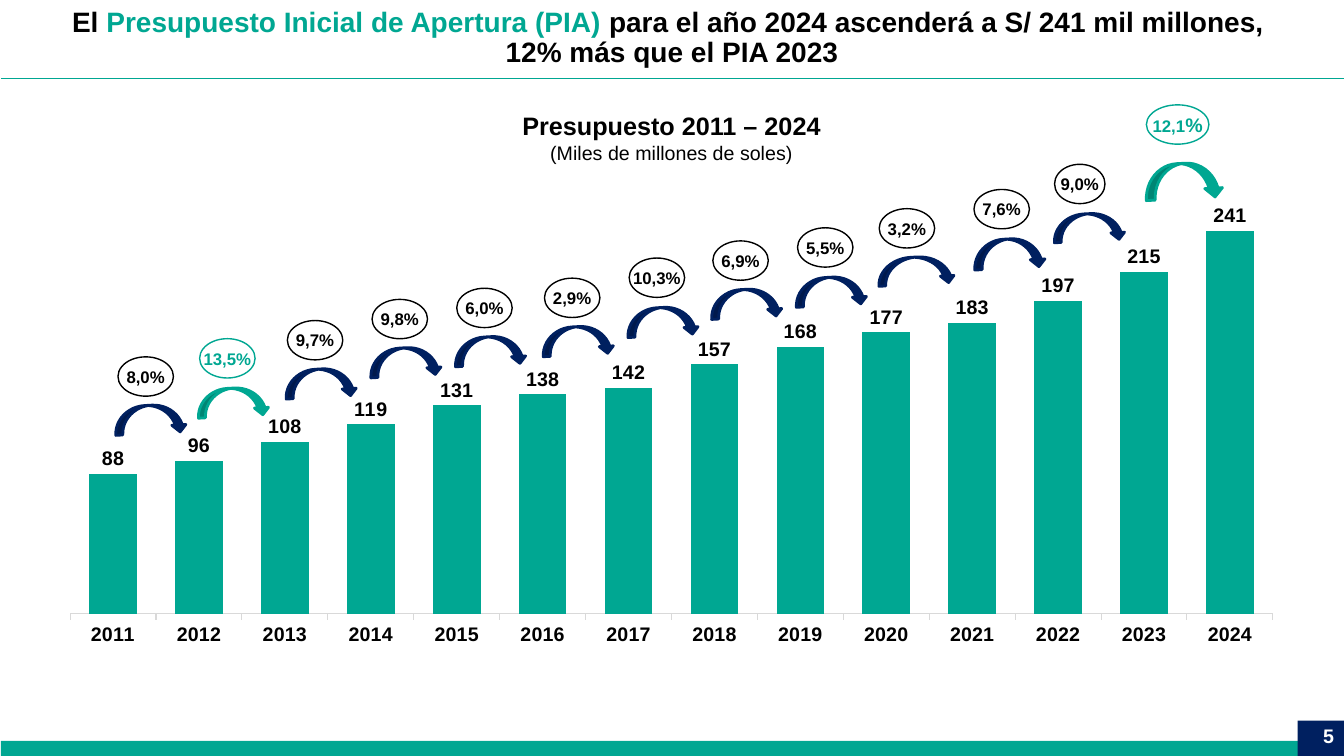
from dataclasses import dataclass

from lxml import etree
from pptx import Presentation
from pptx.chart.data import CategoryChartData
from pptx.dml.color import RGBColor
from pptx.enum.chart import XL_CHART_TYPE, XL_LABEL_POSITION, XL_TICK_MARK
from pptx.enum.shapes import MSO_CONNECTOR, MSO_SHAPE
from pptx.enum.text import MSO_ANCHOR, MSO_AUTO_SIZE, PP_ALIGN
from pptx.oxml import parse_xml
from pptx.oxml.ns import nsdecls, qn
from pptx.shapes.autoshape import Shape
from pptx.slide import Slide
from pptx.text.text import TextFrame
from pptx.util import Inches, Pt

COLUMN = XL_CHART_TYPE.COLUMN_CLUSTERED
OUTSIDE_END = XL_LABEL_POSITION.OUTSIDE_END
TICK_OUT = XL_TICK_MARK.OUTSIDE
STRAIGHT = MSO_CONNECTOR.STRAIGHT
RECT, OVAL, ARROW = MSO_SHAPE.RECTANGLE, MSO_SHAPE.OVAL, MSO_SHAPE.CURVED_DOWN_ARROW
TOP, MIDDLE = MSO_ANCHOR.TOP, MSO_ANCHOR.MIDDLE
NO_AUTOSIZE = MSO_AUTO_SIZE.NONE
CENTER, RIGHT = PP_ALIGN.CENTER, PP_ALIGN.RIGHT


@dataclass(frozen=True)
class Theme:
    font: str = "Arial"
    green: RGBColor = RGBColor(0x00, 0xA7, 0x92)
    navy: RGBColor = RGBColor(0x00, 0x20, 0x60)
    black: RGBColor = RGBColor(0x00, 0x00, 0x00)
    white: RGBColor = RGBColor(0xFF, 0xFF, 0xFF)
    axis: RGBColor = RGBColor(0xD9, 0xD9, 0xD9)
    title: int = 20
    heading: int = 18
    body: int = 14
    badge: int = 12


@dataclass(frozen=True)
class Growth:
    rate: str
    badge_x: float
    badge_y: float
    arrow_x: float
    arrow_y: float
    badge_w: float = 0.55
    arrow_w: float = 0.71
    arrow_h: float = 0.28
    highlight: bool = False
    percent_size: int = 12


THEME = Theme()
FIRST_YEAR = 2011
BILLION = 10**9
BUDGETS = (88, 96, 108, 119, 131, 138, 142, 157, 168, 177, 183, 197, 215, 241)
BADGE_H = 0.39
ARROW_TILT = 356.9
GROWTHS = (
    Growth("8,0", 1.17, 3.54, 1.14, 4.02),
    Growth("13,5", 1.98, 3.36, 1.96, 3.85, highlight=True),
    Growth("9,7", 2.85, 3.18, 2.83, 3.66),
    Growth("9,8", 3.69, 2.97, 3.67, 3.45),
    Growth("6,0", 4.53, 2.86, 4.51, 3.34),
    Growth("2,9", 5.4, 2.76, 5.38, 3.24),
    Growth("10,3", 6.24, 2.56, 6.22, 3.05),
    Growth("6,9", 7.07, 2.39, 7.05, 2.87),
    Growth("5,5", 7.91, 2.26, 7.89, 2.75),
    Growth("3,2", 8.72, 2.07, 8.71, 2.55, arrow_w=0.76, arrow_h=0.27),
    Growth("7,6", 9.66, 1.88, 9.66, 2.37, arrow_h=0.29),
    Growth("9,0", 10.46, 1.63, 10.45, 2.12, badge_w=0.5, arrow_h=0.27),
    Growth("12,1", 11.37, 1.04, 11.36, 1.62, badge_w=0.62, arrow_w=0.77,
           arrow_h=0.35, highlight=True, percent_size=14),
)


def add_paragraph(tf: TextFrame, first: bool, runs: tuple[str, ...], size: int,
                  color: RGBColor, bold: bool = True, align: PP_ALIGN = CENTER):
    p = tf.paragraphs[0] if first else tf.add_paragraph()
    p.alignment = align
    p.font.name, p.font.size, p.font.bold = THEME.font, Pt(size), bold
    p.font.color.rgb = color
    for text in runs:
        p.add_run().text = text
    return p


def add_shape(s: Slide, kind: MSO_SHAPE, x: float, y: float, w: float, h: float,
              fill: RGBColor | None, line: RGBColor | None = None,
              weight: float = 1) -> Shape:
    sp = s.shapes.add_shape(kind, Inches(x), Inches(y), Inches(w), Inches(h))
    sp.shadow.inherit = False
    if fill is None:
        sp.fill.background()
    else:
        sp.fill.solid()
        sp.fill.fore_color.rgb = fill
    if line is None:
        sp.line.fill.background()
    else:
        sp.line.color.rgb = line
        sp.line.width = Pt(weight)
    return sp


def add_text_box(s: Slide, x: float, y: float, w: float, h: float) -> TextFrame:
    tf = s.shapes.add_textbox(Inches(x), Inches(y), Inches(w), Inches(h)).text_frame
    tf.word_wrap = True
    return tf


def add_frame(s: Slide) -> None:
    add_shape(s, RECT, 0.01, 7.35, 13.32, 0.15, THEME.green)
    add_shape(s, RECT, 12.87, 7.15, 0.47, 0.35, THEME.navy)
    rule = s.shapes.add_connector(STRAIGHT, Inches(0.01), Inches(0.78),
                                  Inches(13.33), Inches(0.78))
    rule.line.color.rgb = THEME.green
    rule.line.width = Pt(0.75)
    etree.SubElement(rule.element.spPr, qn("a:effectLst"))
    page = add_text_box(s, 10.33, 7.13, 3, 0.4)
    add_paragraph(page, True, ("5",), THEME.body, THEME.white, align=RIGHT)


def add_title(s: Slide) -> None:
    title = s.shapes.title
    title.left, title.top = Inches(0), Inches(0.03)
    title.width, title.height = Inches(13.33), Inches(0.71)
    tf = title.text_frame
    tf.auto_size, tf.vertical_anchor, tf.word_wrap = NO_AUTOSIZE, TOP, True
    lines = (
        ("El ", "Presupuesto Inicial de Apertura (PIA) ",
         "para el año 2024 ascenderá a S/ 241 mil millones, "),
        ("12% más que el PIA 2023",),
    )
    for i, runs in enumerate(lines):
        p = add_paragraph(tf, i == 0, runs, THEME.title, THEME.black)
        p.line_spacing = 0.9
        p.space_before = Pt(0)
    tf.paragraphs[0].runs[1].font.color.rgb = THEME.green


def add_budget_chart(s: Slide) -> None:
    data = CategoryChartData(number_format="#,##0,,,")
    data.categories = [str(FIRST_YEAR + i) for i in range(len(BUDGETS))]
    data.add_series("Presupuesto", [b * BILLION for b in BUDGETS])
    chart = s.shapes.add_chart(COLUMN, Inches(0.69), Inches(1.19),
                               Inches(11.94), Inches(5.63), data).chart
    chart.has_legend = chart.has_title = False
    chart.font.name, chart.font.size, chart.font.bold = THEME.font, Pt(THEME.body), True
    chart.font.color.rgb = THEME.black

    years = chart.category_axis
    years.major_tick_mark = TICK_OUT
    years.format.line.color.rgb = THEME.axis
    years.format.line.width = Pt(0.75)
    amounts = chart.value_axis
    amounts.visible = amounts.has_major_gridlines = False
    amounts.minimum_scale, amounts.maximum_scale = 0, 300 * BILLION

    plot = chart.plots[0]
    plot.gap_width, plot.overlap, plot.vary_by_categories = 80, -27, False
    plot.has_data_labels = True
    labels = plot.data_labels
    labels.show_value, labels.position = True, OUTSIDE_END
    labels.number_format, labels.number_format_is_linked = "#,##0,,,", False
    bars = plot.series[0].format.fill
    bars.solid()
    bars.fore_color.rgb = THEME.green

    plot_area = chart.element.chart.plotArea
    for old in plot_area.findall(qn("c:layout")):
        plot_area.remove(old)
    bounds = "".join(f'<c:{k} val="{v}"/>' for k, v in (
        ("layoutTarget", "inner"), ("xMode", "edge"), ("yMode", "edge"),
        ("x", 0), ("y", 0.03), ("w", 1), ("h", 0.84)))
    plot_area.insert(0, parse_xml(
        f'<c:layout {nsdecls("c")}><c:manualLayout>{bounds}</c:manualLayout></c:layout>'))


def add_growth(s: Slide, g: Growth) -> None:
    arrow_color = THEME.green if g.highlight else THEME.navy
    badge_color = THEME.green if g.highlight else THEME.black
    arrow = add_shape(s, ARROW, g.arrow_x, g.arrow_y, g.arrow_w, g.arrow_h,
                      arrow_color, arrow_color, 2)
    arrow.rotation = ARROW_TILT
    badge = add_shape(s, OVAL, g.badge_x, g.badge_y, g.badge_w, BADGE_H, None, badge_color)
    tf = badge.text_frame
    tf.margin_left = tf.margin_right = Inches(0.04)
    tf.word_wrap, tf.vertical_anchor = False, MIDDLE
    p = add_paragraph(tf, True, (g.rate, "%"), THEME.badge, badge_color)
    p.runs[1].font.size = Pt(g.percent_size)


def main() -> None:
    prs = Presentation()
    prs.slide_width, prs.slide_height = Inches(13.33), Inches(7.5)
    s = prs.slides.add_slide(prs.slide_layouts[5])
    add_title(s)
    add_budget_chart(s)
    add_frame(s)
    tf = add_text_box(s, 2.94, 1.05, 7.44, 0.64)
    add_paragraph(tf, True, ("Presupuesto 2011 – 2024",), THEME.heading, THEME.black)
    add_paragraph(tf, False, ("(Miles de millones de soles)",), THEME.body, THEME.black, False)
    for growth in GROWTHS:
        add_growth(s, growth)
    prs.save("out.pptx")


if __name__ == "__main__":
    main()
